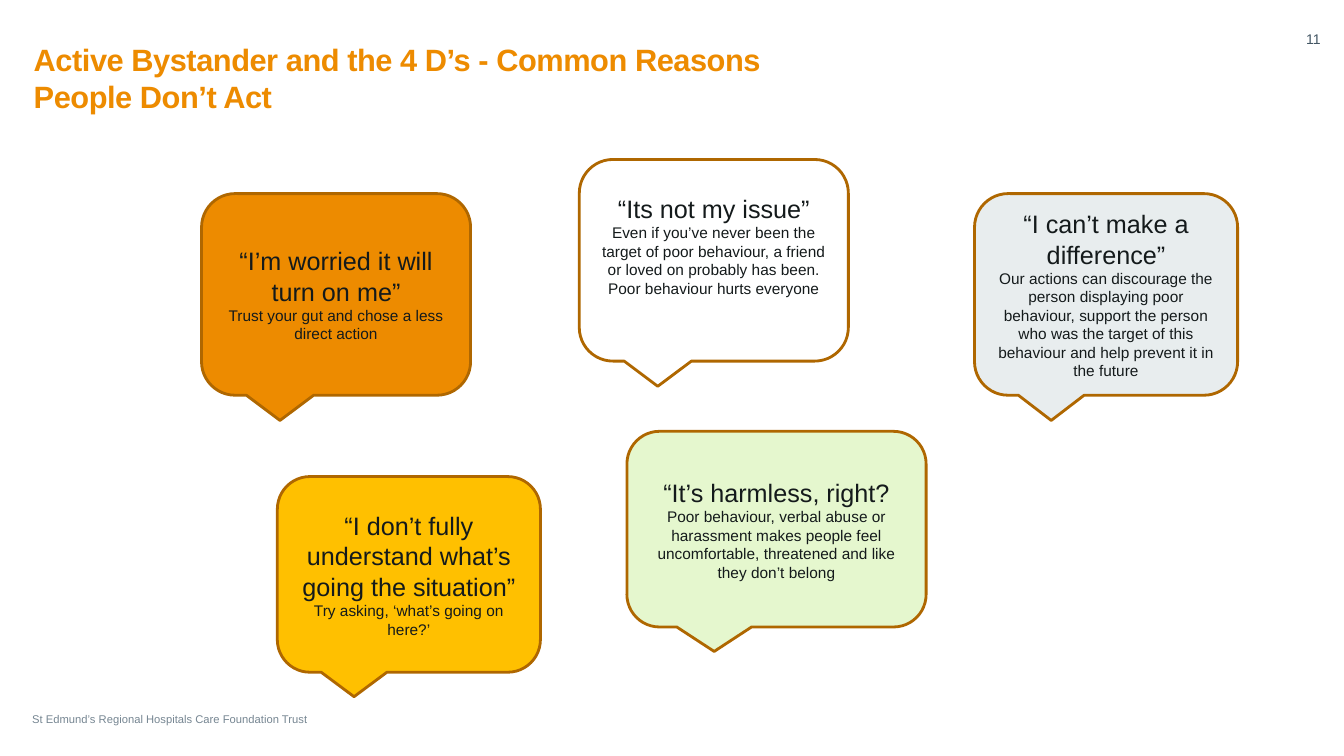
from pptx import Presentation
from pptx.dml.color import RGBColor
from pptx.enum import shapes, text
from pptx.util import Cm, Pt

INK = "141A1B"
OUTLINE = "AF6700"


def color(hex_code):
    return RGBColor.from_string(hex_code)


def style(paragraph, size, hex_code, align=text.PP_ALIGN.LEFT):
    paragraph.alignment = align
    paragraph.font.name = "Arial"
    paragraph.font.size = Pt(size)
    paragraph.font.color.rgb = color(hex_code)


deck = Presentation()
deck.slide_width, deck.slide_height = Cm(33.87), Cm(19.05)
slide = deck.slides.add_slide(deck.slide_layouts[5])

heading = slide.shapes.title
heading.left, heading.top, heading.width, heading.height = Cm(0.85), Cm(1.02), Cm(19.08), Cm(1.9)
heading.text_frame.text = "Active Bystander and the 4 D’s - Common Reasons People Don’t Act"
heading_line = heading.text_frame.paragraphs[0]
style(heading_line, 22, "ED8B00")
heading_line.font.bold = True
heading_line.runs[0].font._element.set("spc", "-30")

page_number = slide.shapes.add_textbox(Cm(32.18), Cm(0.76), Cm(1.1), Cm(0.64))
page_number.text_frame.text = "11"
style(page_number.text_frame.paragraphs[0], 10, "425563", text.PP_ALIGN.RIGHT)

footer = slide.shapes.add_textbox(Cm(0.81), Cm(17.96), Cm(12.34), Cm(0.41))
footer.text_frame.text = "St Edmund’s Regional Hospitals Care Foundation Trust"
style(footer.text_frame.paragraphs[0], 8, "768692")

for label in (heading, page_number, footer):
    frame = label.text_frame
    frame.word_wrap = True
    frame.auto_size = text.MSO_AUTO_SIZE.NONE
    frame.vertical_anchor = text.MSO_ANCHOR.TOP
    frame.margin_left = frame.margin_top = frame.margin_right = frame.margin_bottom = 0

# left, top, width, height, bottom margin (cm), fill, reason, reply
reasons = [
    (5.08, 4.88, 6.78, 5.08, 0.13, "ED8B00", "“I’m worried it will turn on me”",
     "Trust your gut and chose a less direct action"),
    (14.6, 4.02, 6.78, 5.08, 0.88, None, "“Its not my issue”",
     "Even if you’ve never been the target of poor behaviour, a friend or loved on "
     "probably has been. Poor behaviour hurts everyone"),
    (6.99, 12.01, 6.63, 4.93, 0.13, "FFC000",
     "“I don’t fully understand what’s going the situation”",
     "Try asking, ‘what’s going on here?’"),
    (15.8, 10.87, 7.54, 4.93, 0.13, "E5F7CE", "“It’s harmless, right?",
     "Poor behaviour, verbal abuse or harassment makes people feel uncomfortable, "
     "threatened and like they don’t belong"),
    (24.56, 4.88, 6.63, 5.08, 0.13, "E8EDEE", "“I can’t make a difference”",
     "Our actions can discourage the person displaying poor behaviour, support the person "
     "who was the target of this behaviour and help prevent it in the future"),
]

for left, top, width, height, bottom_margin, fill, reason, reply in reasons:
    bubble = slide.shapes.add_shape(shapes.MSO_SHAPE.ROUNDED_RECTANGULAR_CALLOUT,
                                    Cm(left), Cm(top), Cm(width), Cm(height))
    bubble.shadow.inherit = False
    if fill:
        bubble.fill.solid()
        bubble.fill.fore_color.rgb = color(fill)
    else:
        bubble.fill.background()
    bubble.line.color.rgb = color(OUTLINE)
    bubble.line.width = Pt(2)
    frame = bubble.text_frame
    frame.word_wrap = True
    frame.vertical_anchor = text.MSO_ANCHOR.MIDDLE
    frame.margin_bottom = Cm(bottom_margin)
    frame.text = f"{reason}\n{reply}"
    for paragraph, size in zip(frame.paragraphs, (18, 11)):
        style(paragraph, size, INK, text.PP_ALIGN.CENTER)

deck.save("out.pptx")
